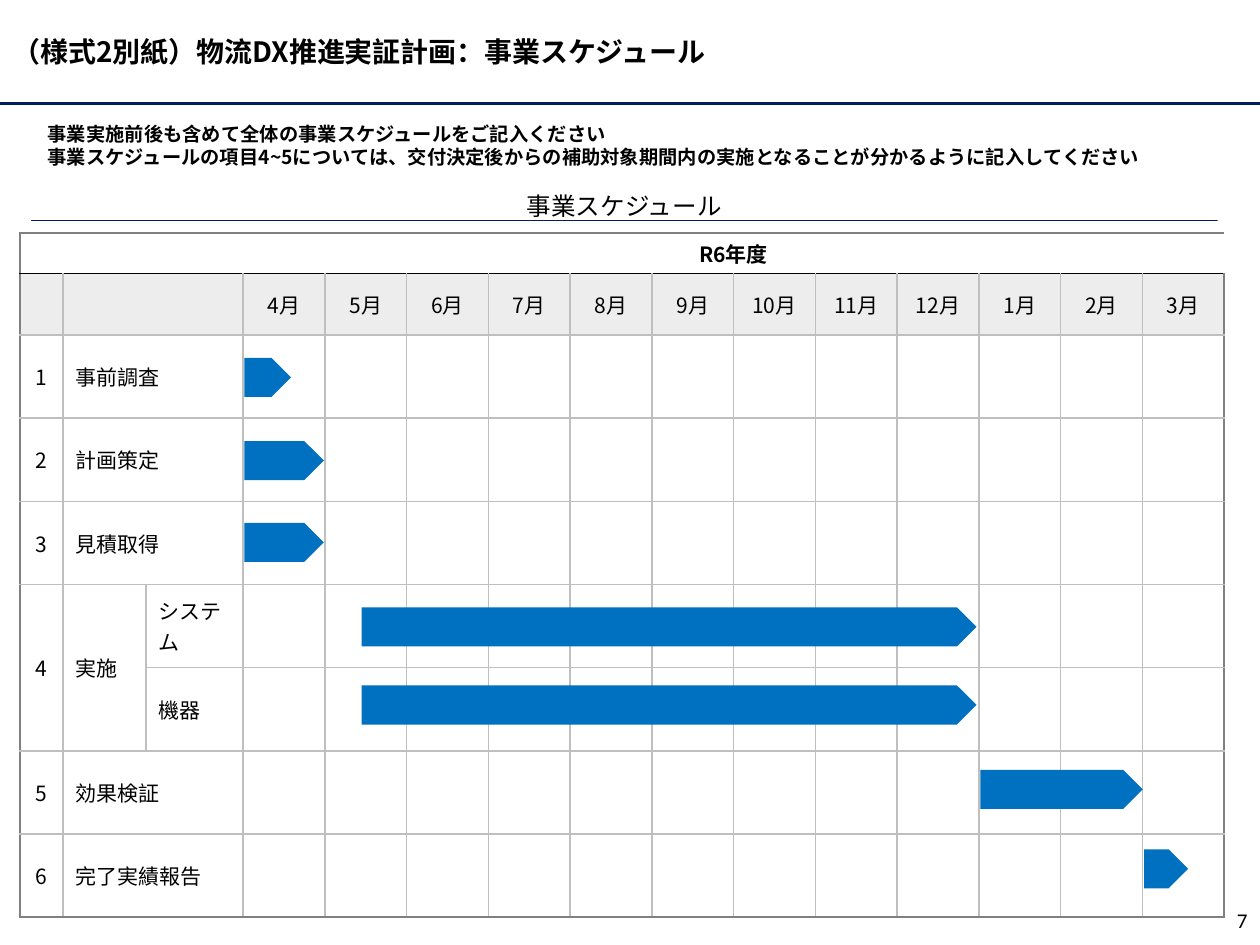
from lxml import etree
from pptx import Presentation
from pptx.dml.color import RGBColor
from pptx.enum.shapes import MSO_CONNECTOR, MSO_SHAPE
from pptx.enum.text import MSO_ANCHOR, PP_ALIGN
from pptx.oxml.ns import qn
from pptx.util import Inches, Pt

THEME = {
    "font": "Noto Sans CJK JP", "number_font": "Calibri",
    "text": "000000", "navy": "002060", "bar": "0070C0", "section": "D6D6E8",
    "grid": "BFBFBF", "frame": "808080", "header": "A5A5A5", "body": "FFFFFF",
    "title_size": 16, "section_size": 14, "table_size": 12, "note_size": 11,
}

# Content
TITLE = "（様式2別紙）物流DX推進実証計画：事業スケジュール"
NOTES = [
    "事業実施前後も含めて全体の事業スケジュールをご記入ください",
    "事業スケジュールの項目4~5については、交付決定後からの補助対象期間内の実施となることが分かるように記入してください",
]
SECTION = "事業スケジュール"
YEAR = "R6年度"
MONTHS = [f"{(3 + offset) % 12 + 1}月" for offset in range(12)]
# Number, task, subtask
TASKS = [
    ("1", "事前調査", ""), ("2", "計画策定", ""), ("3", "見積取得", ""),
    ("4", "実施", "システム"), ("", "", "機器"),
    ("5", "効果検証", ""), ("6", "完了実績報告", ""),
]
# Left, top, width of each bar in inches
BARS = [
    (1.94, 2.84, 0.37), (1.94, 3.5, 0.63), (1.94, 4.15, 0.63),
    (2.87, 4.82, 4.88), (2.87, 5.44, 4.88),
    (9.08, 6.74, 0.35), (7.78, 6.11, 1.29),
]
BAR_HEIGHT = 0.31
PAGE_NUMBER = "7"

# Table geometry
TABLE_LEFT, TABLE_TOP, TABLE_WIDTH = 0.16, 1.85, 9.56
LABEL_WIDTHS = [0.34, 0.66, 0.77]
MONTH_WIDTH = (TABLE_WIDTH - sum(LABEL_WIDTHS)) / len(MONTHS)
COLUMNS = LABEL_WIDTHS + [MONTH_WIDTH] * len(MONTHS)
ROWS = [0.32, 0.49] + [0.66] * len(TASKS)
LAST_ROW, LAST_COLUMN = len(ROWS) - 1, len(COLUMNS) - 1


def color(name):
    return RGBColor.from_string(THEME[name])


def write(paragraph, text, size, bold=False, align=PP_ALIGN.LEFT, font="font"):
    paragraph.alignment = align
    run = paragraph.add_run()
    run.text = text
    run.font.size = Pt(size)
    run.font.bold = bold
    run.font.name = THEME[font]
    run.font.color.rgb = color("text")
    east_asian = etree.SubElement(run.font._element, qn("a:ea"))
    east_asian.set("typeface", THEME[font])


def add_text_box(slide, left, top, width, height):
    box = slide.shapes.add_textbox(*map(Inches, (left, top, width, height)))
    box.text_frame.word_wrap = True
    return box.text_frame


def add_block(slide, kind, left, top, width, height, fill):
    shape = slide.shapes.add_shape(kind, *map(Inches, (left, top, width, height)))
    shape.shadow.inherit = False
    shape.fill.solid()
    shape.fill.fore_color.rgb = color(fill)
    shape.line.fill.background()
    return shape


def set_borders(cell, borders):
    properties = cell._tc.get_or_add_tcPr()
    for side, name in borders.items():
        line = etree.SubElement(properties, qn(f"a:ln{side}"), w=str(Pt(1)))
        if name:
            fill = etree.SubElement(line, qn("a:solidFill"))
            etree.SubElement(fill, qn("a:srgbClr"), val=THEME[name])
        else:
            etree.SubElement(line, qn("a:noFill"))


def cell_borders(row, column):
    inner = "grid" if row else None
    return {
        "L": "frame" if column == 0 else inner,
        "R": "frame" if column == LAST_COLUMN else inner,
        "T": {0: "frame", 1: "text"}.get(row, "grid"),
        "B": {0: "text", LAST_ROW: "frame"}.get(row, "grid"),
    }


def fill_cell(cell, row):
    if row == 0:
        cell.fill.background()
        return
    cell.fill.solid()
    cell.fill.fore_color.rgb = color("header" if row == 1 else "body")
    if row == 1:
        tint = cell._tc.tcPr.find(f"{qn('a:solidFill')}/{qn('a:srgbClr')}")
        etree.SubElement(tint, qn("a:alpha"), val="20000")


def add_schedule(slide):
    table = slide.shapes.add_table(
        len(ROWS), len(COLUMNS), Inches(TABLE_LEFT), Inches(TABLE_TOP),
        Inches(TABLE_WIDTH), Inches(sum(ROWS))).table
    table.first_row = table.horz_banding = False
    for column, width in zip(table.columns, COLUMNS):
        column.width = Inches(width)
    for row, height in zip(table.rows, ROWS):
        row.height = Inches(height)

    texts = [["", "", "", YEAR] + [""] * 11, ["", "", ""] + MONTHS]
    texts += [list(task) + [""] * len(MONTHS) for task in TASKS]
    for row, line in enumerate(texts):
        for column, text in enumerate(line):
            cell = table.cell(row, column)
            set_borders(cell, cell_borders(row, column))
            fill_cell(cell, row)
            cell.vertical_anchor = MSO_ANCHOR.MIDDLE
            if row == 0:
                cell.margin_top = cell.margin_bottom = Inches(0.03)
            if row == 1 and column >= len(LABEL_WIDTHS):
                cell.margin_left = cell.margin_right = 0
            paragraph = cell.text_frame.paragraphs[0]
            if text:
                centred = row < 2 or column == 0
                write(paragraph, text, THEME["table_size"], bold=row == 0,
                      align=PP_ALIGN.CENTER if centred else PP_ALIGN.LEFT)
            else:
                etree.SubElement(paragraph._p, qn("a:endParaRPr"),
                                 sz=str(THEME["table_size"] * 100))

    # Merged headings and task labels
    merges = [(0, 0, 0, 2), (0, 3, 0, LAST_COLUMN), (1, 1, 1, 2),
              (5, 0, 6, 0), (5, 1, 6, 1)]
    merges += [(row, 1, row, 2) for row, task in enumerate(TASKS, 2) if not task[2]]
    for top, left, bottom, right in merges:
        table.cell(top, left).merge(table.cell(bottom, right))


def main():
    presentation = Presentation()
    presentation.slide_width, presentation.slide_height = Inches(10), Inches(7.5)
    slide = presentation.slides.add_slide(presentation.slide_layouts[5])

    # Title and rule
    title = slide.shapes.title
    title.left, title.top, title.width, title.height = map(Inches, (0, 0, 10, 0.82))
    title.text_frame.vertical_anchor = MSO_ANCHOR.MIDDLE
    write(title.text_frame.paragraphs[0], TITLE, THEME["title_size"], bold=True)
    rule = slide.shapes.add_connector(
        MSO_CONNECTOR.STRAIGHT, 0, Inches(0.82), Inches(10), Inches(0.82))
    rule.line.color.rgb = color("navy")
    rule.line.width = Pt(1.5)
    etree.SubElement(rule._element.spPr, qn("a:effectLst"))

    # Page number
    frame = add_text_box(slide, 7.75, 7.1, 2.25, 0.4)
    frame.vertical_anchor = MSO_ANCHOR.MIDDLE
    write(frame.paragraphs[0], PAGE_NUMBER, THEME["table_size"],
          align=PP_ALIGN.RIGHT, font="number_font")

    # Instructions
    frame = add_text_box(slide, 0.28, 0.92, 9.46, 0.47)
    for index, note in enumerate(NOTES):
        paragraph = frame.add_paragraph() if index else frame.paragraphs[0]
        paragraph.line_spacing = Pt(13.3)
        write(paragraph, note, THEME["note_size"], bold=True)

    # Underlined section heading
    section = add_block(slide, MSO_SHAPE.RECTANGLE, 0.25, 1.75, 9.41, 0, "section")
    section.line.color.rgb = color("navy")
    section.line.width = Pt(0.75)
    frame = section.text_frame
    frame.vertical_anchor = MSO_ANCHOR.BOTTOM
    frame.margin_top = frame.margin_bottom = Inches(0.04)
    frame.paragraphs[0].line_spacing = 1.3
    write(frame.paragraphs[0], SECTION, THEME["section_size"], align=PP_ALIGN.CENTER)

    # Schedule and bars
    add_schedule(slide)
    for left, top, width in BARS:
        add_block(slide, MSO_SHAPE.PENTAGON, left, top, width, BAR_HEIGHT, "bar")

    presentation.save("out.pptx")


if __name__ == "__main__":
    main()
